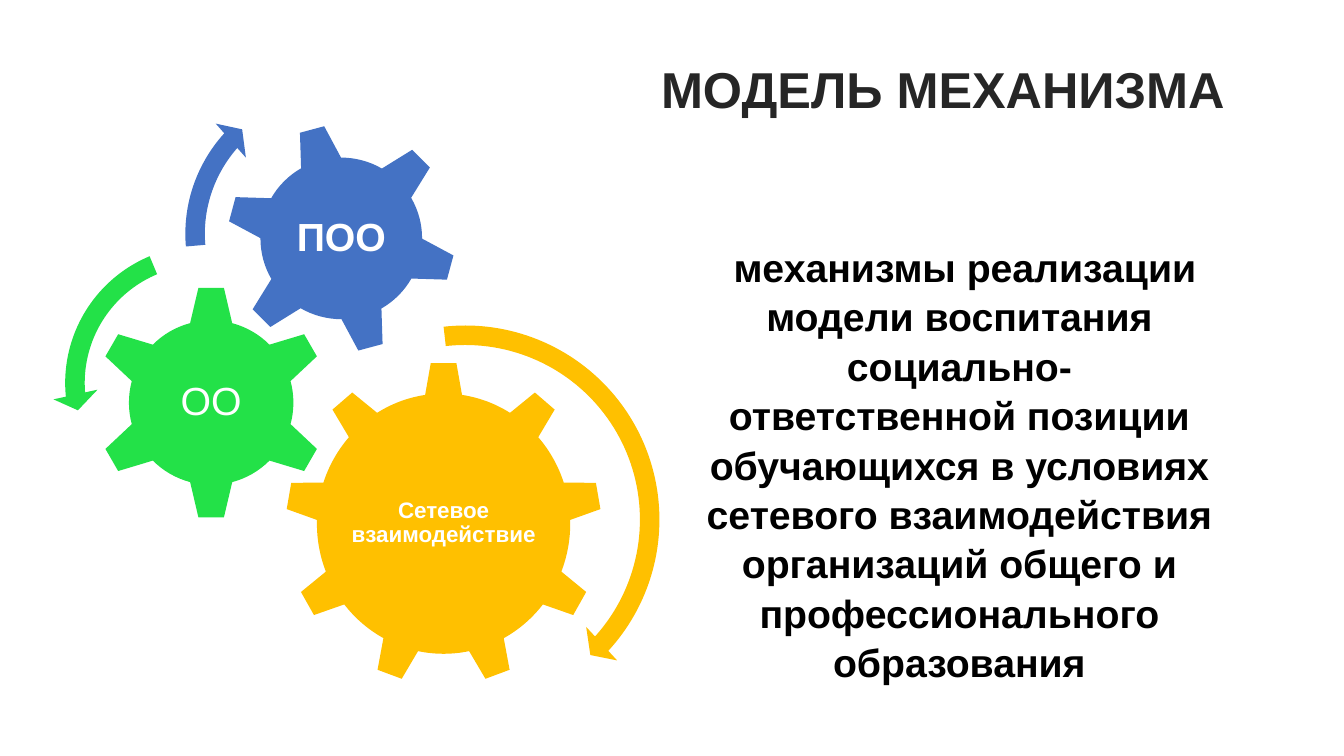
from collections import namedtuple

from pptx import Presentation
from pptx.dml.color import RGBColor
from pptx.enum.shapes import MSO_SHAPE
from pptx.enum.text import MSO_ANCHOR, PP_ALIGN
from pptx.util import Inches, Pt

GEAR_6, GEAR_9 = MSO_SHAPE.GEAR_6, MSO_SHAPE.GEAR_9
ARROW, LEFT_ARROW = MSO_SHAPE.CIRCULAR_ARROW, MSO_SHAPE.LEFT_CIRCULAR_ARROW
CENTER, RIGHT = PP_ALIGN.CENTER, PP_ALIGN.RIGHT
TOP, MIDDLE = MSO_ANCHOR.TOP, MSO_ANCHOR.MIDDLE
TITLE_ONLY = 5
FONT = "Arial"
COLORS = {
    "title": "262626",
    "body": "000000",
    "label": "FFFFFF",
    "network": "FFC000",
    "school": "23E148",
    "college": "4472C4",
}

Box = namedtuple("Box", "left top width height")
Gear = namedtuple("Gear", "color kind box rotation text label_size font_size bold")
Arrow = namedtuple("Arrow", "color kind box adjustments")

TITLE_BOX = Box(6.4, 0.53, 5.85, 1.45)
DIAGRAM_BOX = Box(0.52, 0.71, 6.15, 6.5)
BODY_BOX = Box(6.89, 2.34, 5.25, 4.81)

# Boxes are relative to the top left corner of the diagram
GEARS = [
    Gear("network", GEAR_9, Box(2.31, 2.88, 3.14, 3.21), 0,
         "Сетевое взаимодействие", (1.88, 1.66), 16, True),
    Gear("school", GEAR_6, Box(0.41, 2.12, 2.33, 2.33), 0,
         "ОО", (1.16, 1.15), 28, False),
    Gear("college", GEAR_6, Box(1.72, 0.51, 2.29, 2.29), 345,
         "ПОО", (1.28, 1.28), 28, True),
]
ARROWS = [
    Arrow("network", ARROW, Box(2.04, 2.39, 4.11, 4.11),
          (0.047, 2.99, 25.38, 158.151, 0.055)),
    Arrow("school", LEFT_ARROW, Box(0, 1.6, 2.98, 2.98),
          (0.065, 4.3, 104.891, 148.378, 0.075)),
    Arrow("college", ARROW, Box(1.19, 0, 3.22, 3.22),
          (0.06, 3.941, 133.138, 105.082, 0.07)),
]
BODY_TEXT = (
    " механизмы реализации модели воспитания социально-ответственной позиции "
    "обучающихся в условиях сетевого взаимодействия организаций общего и "
    "профессионального образования"
)


def inches(box):
    return [Inches(value) for value in box]


def inside(outer, box):
    return Box(outer.left + box.left, outer.top + box.top, box.width, box.height)


def centered(outer, width, height):
    return Box(outer.left + (outer.width - width) / 2,
               outer.top + (outer.height - height) / 2, width, height)


def write(shape, text, size, color, bold, align, anchor, spacing):
    frame = shape.text_frame
    frame.text = text
    frame.vertical_anchor = anchor
    frame.word_wrap = True
    paragraph = frame.paragraphs[0]
    paragraph.alignment = align
    paragraph.line_spacing = spacing
    font = paragraph.runs[0].font
    font.name, font.size, font.bold = FONT, Pt(size), bold
    font.color.rgb = RGBColor.from_string(COLORS[color])
    return frame


def add_solid(shapes, kind, box, color):
    shape = shapes.add_shape(kind, *inches(box))
    shape.shadow.inherit = False
    shape.fill.solid()
    shape.fill.fore_color.rgb = RGBColor.from_string(COLORS[color])
    shape.line.fill.background()
    return shape


def add_title(slide, box):
    title = slide.shapes.title
    title.left, title.top, title.width, title.height = inches(box)
    frame = write(title, "МОДЕЛЬ МЕХАНИЗМА", 36, "title", True, RIGHT, TOP, 1.0)
    frame.word_wrap = False


def add_gear_diagram(slide, box):
    shapes = slide.shapes.add_group_shape().shapes

    # Gears with their labels
    for gear in GEARS:
        gear_box = inside(box, gear.box)
        shape = add_solid(shapes, gear.kind, gear_box, gear.color)
        shape.rotation = gear.rotation
        label = shapes.add_textbox(*inches(centered(gear_box, *gear.label_size)))
        frame = write(label, gear.text, gear.font_size, "label", gear.bold,
                      CENTER, MIDDLE, 0.9)
        frame.margin_left = frame.margin_right = Inches(0.02)
        frame.margin_top = frame.margin_bottom = Inches(0.02)

    # Arrows showing the turning direction
    for arrow in ARROWS:
        shape = add_solid(shapes, arrow.kind, inside(box, arrow.box), arrow.color)
        for index, value in enumerate(arrow.adjustments):
            shape.adjustments[index] = value


def add_body(slide, box):
    body = slide.shapes.add_textbox(*inches(box))
    write(body, BODY_TEXT, 28, "body", True, CENTER, TOP, 1.05)


def main():
    presentation = Presentation()
    presentation.slide_width = Inches(13.33)
    presentation.slide_height = Inches(7.5)
    slide = presentation.slides.add_slide(presentation.slide_layouts[TITLE_ONLY])
    add_title(slide, TITLE_BOX)
    add_gear_diagram(slide, DIAGRAM_BOX)
    add_body(slide, BODY_BOX)
    presentation.save("out.pptx")


if __name__ == "__main__":
    main()
